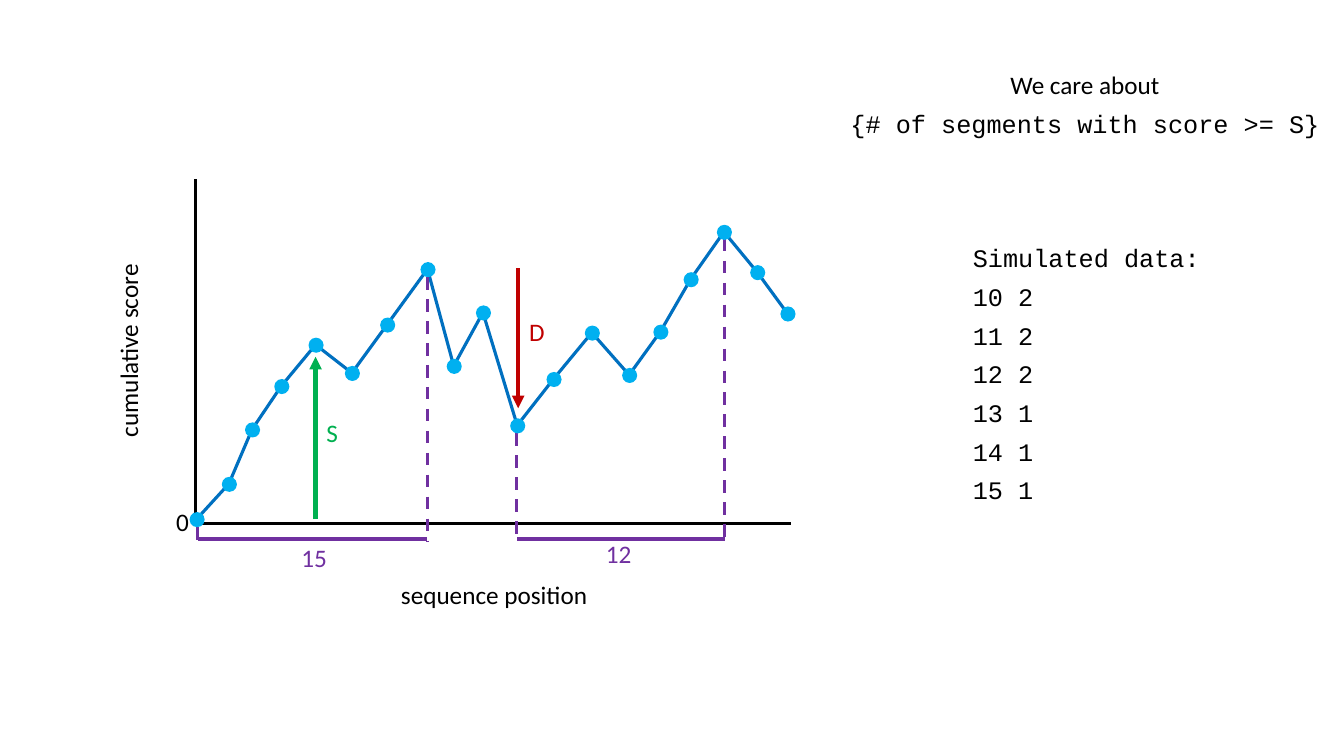
from itertools import pairwise
from typing import NamedTuple

from lxml.etree import SubElement
from pptx import Presentation
from pptx.dml.color import RGBColor
from pptx.enum.dml import MSO_LINE
from pptx.enum.shapes import MSO_CONNECTOR, MSO_SHAPE
from pptx.enum.text import MSO_ANCHOR, MSO_AUTO_SIZE, PP_ALIGN
from pptx.oxml.ns import qn
from pptx.util import Emu, Pt

SCALE = 9144  # EMU in one px, 100 px to the inch
BLACK = RGBColor(0x00, 0x00, 0x00)
WHITE = RGBColor(0xFF, 0xFF, 0xFF)
BLUE = RGBColor(0x00, 0x70, 0xC0)
SKY = RGBColor(0x00, 0xB0, 0xF0)
GREEN = RGBColor(0x00, 0xB0, 0x50)
RED = RGBColor(0xC0, 0x00, 0x00)
PURPLE = RGBColor(0x70, 0x30, 0xA0)
SANS, MONO = "Calibri", "Courier New"
DOT = 15
INDENT = 50


class Rule(NamedTuple):
    x1: int
    y1: int
    x2: int
    y2: int
    color: RGBColor
    width: float = 2.25
    dash: bool = False
    arrow: bool = False


class Label(NamedTuple):
    text: str
    x: int
    y: int
    w: int
    color: RGBColor = BLACK
    align: PP_ALIGN = PP_ALIGN.LEFT
    turn: int = 0


class Row(NamedTuple):
    text: str
    font: str = MONO


# Centres of the score points, left to right
POINTS = [
    (195, 515), (227, 480), (250, 426), (279, 383), (313, 342),
    (349, 370), (384, 322), (424, 267), (450, 363), (479, 310),
    (513, 422), (549, 376), (587, 330), (624, 372), (655, 329),
    (685, 277), (718, 230), (751, 270), (781, 311),
]
AXES = [
    Rule(194, 519, 785, 519, BLACK),
    Rule(194, 178, 194, 520, BLACK),
]
SPANS = [
    Rule(196, 535, 424, 535, PURPLE, 3),
    Rule(513, 535, 719, 535, PURPLE, 3),
]
DROPS = [
    Rule(x, top, x, 537, PURPLE, dash=True)
    for x, top in [(196, 523), (424, 275), (512, 430), (719, 237)]
]
ARROWS = [
    Rule(514, 266, 514, 405, RED, 3, arrow=True),
    Rule(313, 515, 313, 354, GREEN, 3, arrow=True),
]
LABELS = [
    Label("0", 165, 497, 33),
    Label("S", 314, 409, 33, GREEN),
    Label("D", 515, 309, 33, RED),
    Label("15", 289, 533, 48, PURPLE),
    Label("12", 591, 529, 48, PURPLE),
    Label("sequence position", 194, 570, 592, align=PP_ALIGN.CENTER),
    Label("cumulative score", -43, 328, 340, align=PP_ALIGN.CENTER, turn=270),
]
GOAL = [Row("We care about", SANS), Row("{# of segments with score >= S}")]
DATA = [Row(text) for text in (
    "Simulated data:", "10 2", "11 2", "12 2", "13 1", "14 1", "15 1")]


def px(n: int) -> Emu:
    return Emu(n * SCALE)


def draw_rule(shapes, rule: Rule) -> None:
    line = shapes.add_connector(
        MSO_CONNECTOR.STRAIGHT, *map(px, (rule.x1, rule.y1, rule.x2, rule.y2)))
    line.line.color.rgb = rule.color
    line.line.width = Pt(rule.width)
    if rule.dash:
        line.line.dash_style = MSO_LINE.DASH
    if rule.arrow:
        SubElement(line.line._get_or_add_ln(), qn("a:tailEnd"), type="triangle")
    SubElement(line._element.spPr, qn("a:effectLst"))


def draw_dot(shapes, x: int, y: int) -> None:
    half = DOT // 2
    dot = shapes.add_shape(
        MSO_SHAPE.OVAL, px(x - half), px(y - half), px(DOT), px(DOT))
    dot.shadow.inherit = False
    dot.fill.solid()
    dot.fill.fore_color.rgb = SKY
    dot.line.fill.background()


def set_font(para, name: str, color: RGBColor) -> None:
    para.font.name = name
    para.font.size = Pt(18)
    para.font.color.rgb = color


def draw_label(shapes, label: Label) -> None:
    box = shapes.add_textbox(*map(px, (label.x, label.y, label.w, 40)))
    box.rotation = label.turn
    frame = box.text_frame
    frame.word_wrap = True
    frame.auto_size = MSO_AUTO_SIZE.SHAPE_TO_FIT_TEXT
    para = frame.paragraphs[0]
    para.text = label.text
    para.alignment = label.align
    set_font(para, SANS, label.color)


def fill_rows(frame, rows: list[Row], align: PP_ALIGN) -> None:
    frame.word_wrap = True
    frame.auto_size = MSO_AUTO_SIZE.SHAPE_TO_FIT_TEXT
    for i, row in enumerate(rows):
        para = frame.add_paragraph() if i else frame.paragraphs[0]
        para.text = row.text
        para.level = 1
        para.alignment = align
        para.space_before = Pt(6)
        props = para._p.get_or_add_pPr()
        props.set("marL", str(px(INDENT)))
        props.set("indent", "0")
        set_font(para, row.font, BLACK)


def main() -> None:
    deck = Presentation()
    deck.slide_width, deck.slide_height = px(1333), px(750)
    shapes = deck.slides.add_slide(deck.slide_layouts[6]).shapes

    # Chart: axes, score path, marked spans, points, arrows
    path = [Rule(*start, *end, BLUE) for start, end in pairwise(POINTS)]
    for rule in AXES + path + SPANS + DROPS:
        draw_rule(shapes, rule)
    for x, y in POINTS:
        draw_dot(shapes, x, y)
    for rule in ARROWS:
        draw_rule(shapes, rule)
    for label in LABELS:
        draw_label(shapes, label)

    # Goal at the top right
    goal = shapes.add_textbox(px(782), px(64), px(538), px(79))
    fill_rows(goal.text_frame, GOAL, PP_ALIGN.CENTER)

    # Simulated data
    data = shapes.add_shape(
        MSO_SHAPE.RECTANGLE, px(905), px(236), px(322), px(273))
    data.shadow.inherit = False
    data.fill.solid()
    data.fill.fore_color.rgb = WHITE
    data.line.fill.background()
    data.text_frame.vertical_anchor = MSO_ANCHOR.TOP
    fill_rows(data.text_frame, DATA, PP_ALIGN.LEFT)

    deck.save("out.pptx")


if __name__ == "__main__":
    main()
